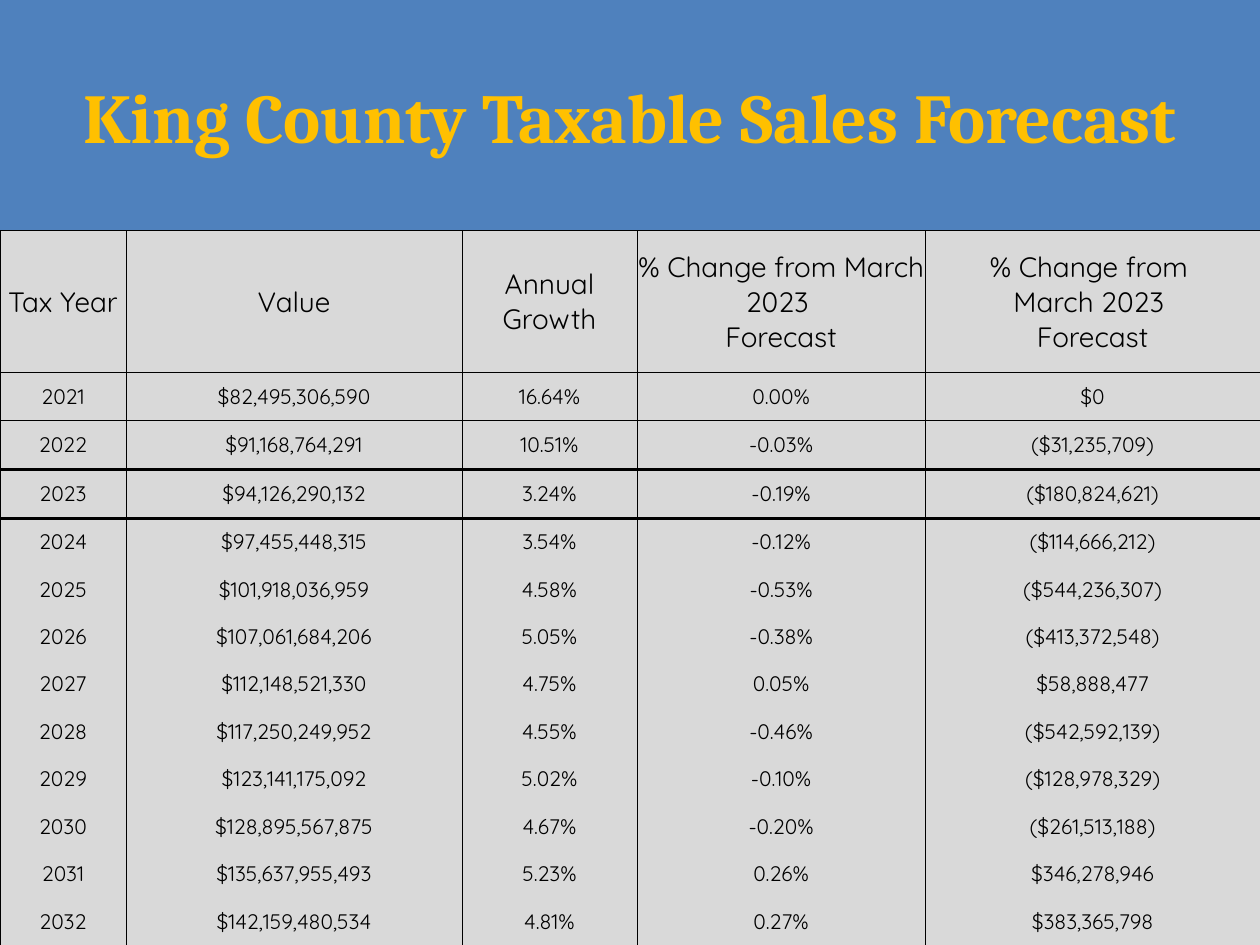
import copy

import pptx
import pptx.dml.color
import pptx.enum.shapes
import pptx.enum.text
import pptx.oxml
import pptx.oxml.ns
import pptx.util

Pt = pptx.util.Pt
qn = pptx.oxml.ns.qn
CENTER = pptx.enum.text.PP_ALIGN.CENTER
MIDDLE = pptx.enum.text.MSO_ANCHOR.MIDDLE
NO_STYLE = "{2D5ABB26-0587-4C30-8999-92F81FD0307C}"

HEADERS = ["Tax Year", "Value", "Annual Growth",
           "% Change from March 2023 \vForecast",
           "% Change from \vMarch 2023 \vForecast"]
FORECAST = [
    ["2021", "$82,495,306,590", "16.64%", "0.00%", "$0"],
    ["2022", "$91,168,764,291", "10.51%", "-0.03%", "($31,235,709)"],
    ["2023", "$94,126,290,132", "3.24%", "-0.19%", "($180,824,621)"],
    ["2024", "$97,455,448,315", "3.54%", "-0.12%", "($114,666,212)"],
    ["2025", "$101,918,036,959", "4.58%", "-0.53%", "($544,236,307)"],
    ["2026", "$107,061,684,206", "5.05%", "-0.38%", "($413,372,548)"],
    ["2027", "$112,148,521,330", "4.75%", "0.05%", "$58,888,477"],
    ["2028", "$117,250,249,952", "4.55%", "-0.46%", "($542,592,139)"],
    ["2029", "$123,141,175,092", "5.02%", "-0.10%", "($128,978,329)"],
    ["2030", "$128,895,567,875", "4.67%", "-0.20%", "($261,513,188)"],
    ["2031", "$135,637,955,493", "5.23%", "0.26%", "$346,278,946"],
    ["2032", "$142,159,480,534", "4.81%", "0.27%", "$383,365,798"],
]
COL_WIDTHS = [72, 192, 100, 164.8, 191.2]
ROW_HEIGHTS = [81.2, 27.1, 28, 28] + [27.1] * 9
RULES = {0: 0.5, 1: 0.5, 3: 2, 13: 0.5}
TITLE_HEIGHT = 131.8


def rgb(value):
    return pptx.dml.color.RGBColor.from_string(value)


def apply(obj, values):
    for name, value in values.items():
        setattr(obj, name, value)


class Deck:
    title_font = {"name": "Cambria", "size": Pt(40), "bold": True}
    header_font = {"name": "Quicksand", "size": Pt(16)}
    body_font = {"name": "Quicksand", "size": Pt(12)}
    cell_format = {"vertical_anchor": MIDDLE, "margin_left": 0, "margin_right": 0,
                   "margin_top": 0, "margin_bottom": 0}
    banner_fill, title_color = "4F81BD", "FFC000"
    cell_fill, ink = "D9D9D9", "000000"

    def __init__(self, width, height):
        self.prs = pptx.Presentation()
        apply(self.prs, {"slide_width": Pt(width), "slide_height": Pt(height)})
        self.s = self.prs.slides.add_slide(self.prs.slide_layouts[6])

    def fill(self, obj, color):
        obj.fill.solid()
        obj.fill.fore_color.rgb = rgb(color)

    def text(self, tf, text, font, color):
        p = tf.paragraphs[0]
        apply(p, {"text": text, "alignment": CENTER})
        for r in p.runs:
            apply(r.font, font)
            r.font.color.rgb = rgb(color)
        for br in p._p.findall(qn("a:br")):
            br.append(copy.deepcopy(p.runs[0]._r.rPr))

    def banner(self, text, x, y, w, h):
        sp = self.s.shapes.add_shape(pptx.enum.shapes.MSO_SHAPE.RECTANGLE,
                                     Pt(x), Pt(y), Pt(w), Pt(h))
        sp.shadow.inherit = False
        sp.line.fill.background()
        self.fill(sp, self.banner_fill)
        apply(sp.text_frame, {"word_wrap": True, "vertical_anchor": MIDDLE})
        self.text(sp.text_frame, text, self.title_font, self.title_color)

    def border(self, cell, side, width):
        ln = pptx.oxml.parse_xml(
            f'<a:ln{side} {pptx.oxml.ns.nsdecls("a")} w="{Pt(width)}"><a:solidFill>'
            f'<a:srgbClr val="{self.ink}"/></a:solidFill></a:ln{side}>')
        cell._tc.get_or_add_tcPr().append(ln)

    def cell(self, cell, text, font, borders):
        apply(cell, self.cell_format)
        for side, width in borders.items():
            if width:
                self.border(cell, side, width)
        self.fill(cell, self.cell_fill)
        self.text(cell.text_frame, text, font, self.ink)

    def table(self, rows, x, y, widths, heights, rules):
        frame = self.s.shapes.add_table(len(rows), len(widths), Pt(x), Pt(y),
                                        Pt(sum(widths)), Pt(sum(heights)))
        table = frame.table
        apply(table, {"first_row": False, "horz_banding": False})
        table._tbl.tblPr.find(qn("a:tableStyleId")).text = NO_STYLE
        for col, width in zip(table.columns, widths):
            col.width = Pt(width)
        for i, (row, height, texts) in enumerate(zip(table.rows, heights, rows)):
            row.height = Pt(height)
            font = self.body_font if i else self.header_font
            borders = {"L": 0.5, "R": 0.5, "T": rules.get(i), "B": rules.get(i + 1)}
            for cell, text in zip(row.cells, texts):
                self.cell(cell, text, font, borders)


def main():
    deck = Deck(720, 540)
    deck.banner("King County Taxable Sales Forecast", 0, 0, 720, TITLE_HEIGHT)
    deck.table([HEADERS] + FORECAST, 0, TITLE_HEIGHT, COL_WIDTHS, ROW_HEIGHTS, RULES)
    deck.prs.save("out.pptx")


if __name__ == "__main__":
    main()
